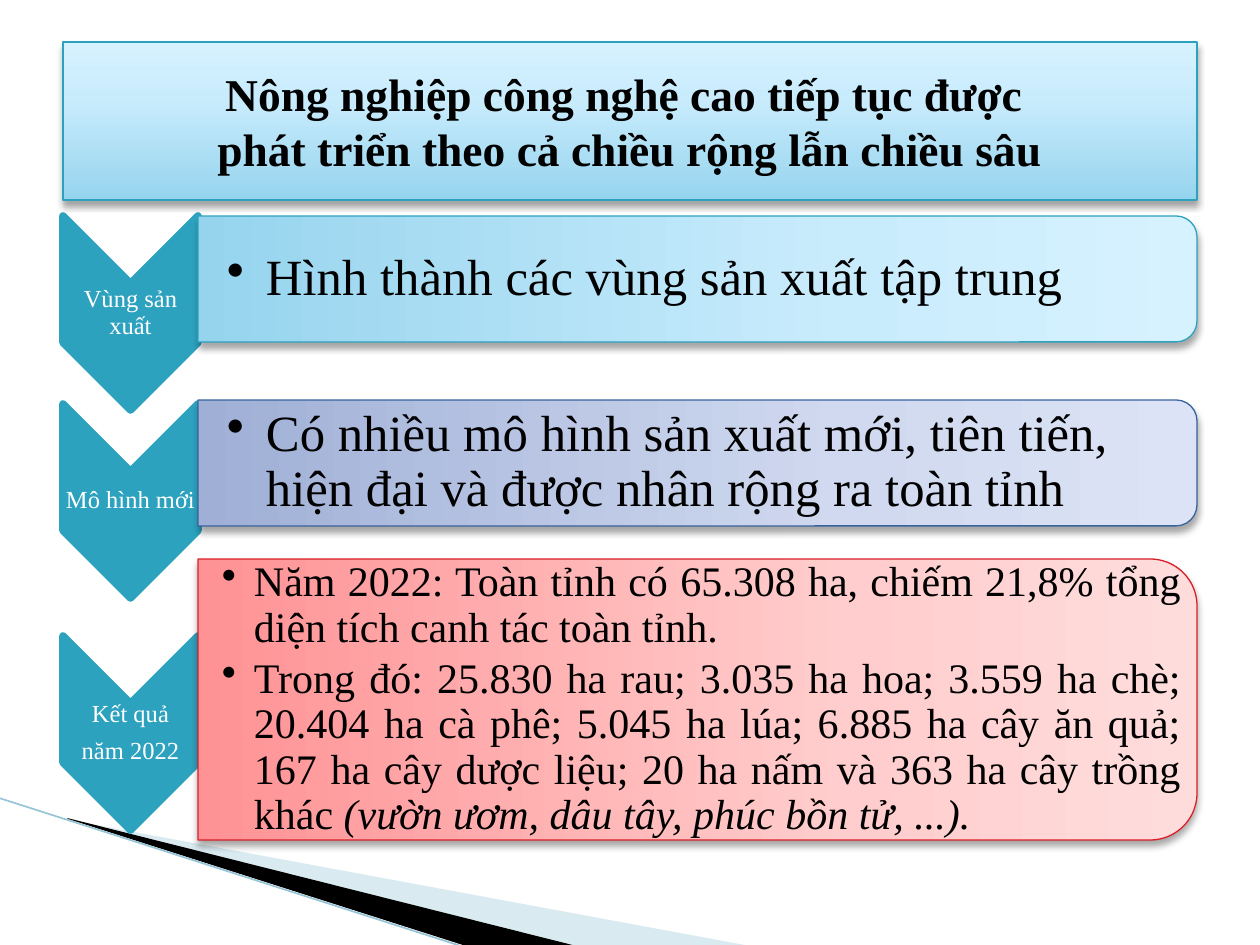
from copy import deepcopy

from lxml import etree
from pptx import Presentation
from pptx import util as u
from pptx.dml.color import RGBColor
from pptx.enum import shapes, text
from pptx.oxml.ns import qn

PX = u.Inches(1) / 126
FONT = "Times New Roman"
BLACK = RGBColor(0x00, 0x00, 0x00)
WHITE = RGBColor(0xFF, 0xFF, 0xFF)
TEAL = RGBColor(0x2D, 0xA2, 0xBF)
NAVY = RGBColor(0x39, 0x63, 0x9D)
RED = RGBColor(0xDA, 0x1F, 0x28)
PALE_BLUE = RGBColor(0xA0, 0xCB, 0xDC)
LINE_BLUE = RGBColor(0x97, 0xC5, 0xD8)
SKY_STOPS = [RGBColor(0x96, 0xD4, 0xEE), RGBColor(0xC9, 0xEC, 0xFC), RGBColor(0xD7, 0xF2, 0xFF)]
NAVY_STOPS = [RGBColor(0x9F, 0xAF, 0xD6), RGBColor(0xD0, 0xD9, 0xEF), RGBColor(0xDC, 0xE3, 0xF6)]
RED_STOPS = [RGBColor(0xFF, 0x92, 0x94), RGBColor(0xFF, 0xCD, 0xCD), RGBColor(0xFF, 0xDC, 0xDC)]


def px(n):
    return u.Emu(round(n * PX))


def sub(parent, tag, **attrs):
    return etree.SubElement(parent, qn(tag), {k: str(v) for k, v in attrs.items()})


class Deck:
    def __init__(self, slide):
        self.s = slide

    def glossy(self, sp, stops, line):
        """Three-stop gradient, thin outline and a soft shadow below."""
        sp.shadow.inherit = False
        sp.fill.gradient()
        sp.fill.gradient_angle = 90
        gs_list = sp._element.spPr.find(".//" + qn("a:gsLst"))
        gs_list.append(deepcopy(gs_list[-1]))
        for stop, color, position in zip(sp.fill.gradient_stops, stops, (0, 0.65, 1)):
            stop.color.rgb = color
            stop.position = position
        sp.line.color.rgb = line
        sp.line.width = u.Pt(0.75)
        shadow = sub(sp._element.spPr.find(qn("a:effectLst")), "a:outerShdw", blurRad=u.Pt(4),
                     dist=u.Pt(3), dir=5400000, rotWithShape=0)
        sub(sub(shadow, "a:srgbClr", val=BLACK), "a:alpha", val=35000)

    def turned(self, kind, x, y, w, h):
        """Preset shape turned 90 degrees that covers the given box on the slide."""
        sp = self.s.shapes.add_shape(kind, px(x + (w - h) / 2), px(y + (h - w) / 2), px(h), px(w))
        sp.rotation = 90
        sp.shadow.inherit = False
        return sp

    def chevron(self, x, y, w, h):
        sp = self.turned(shapes.MSO_SHAPE.CHEVRON, x, y, w, h)
        sp.fill.solid()
        sp.fill.fore_color.rgb = TEAL
        sp.line.color.rgb = TEAL
        sp.line.width = u.Pt(4.33)
        sub(sp.line._get_or_add_ln(), "a:round")

    def bar(self, x, y, w, h, stops, line):
        self.glossy(self.turned(shapes.MSO_SHAPE.ROUND_2_SAME_RECTANGLE, x, y, w, h), stops, line)

    def textbox(self, x, y, w, h, paragraphs, size, color, align, after, left=1, inset=1, indent=0):
        """Each paragraph is a list of runs; every second run is italic."""
        tf = self.s.shapes.add_textbox(px(x), px(y), px(w), px(h)).text_frame
        tf.word_wrap = True
        tf.vertical_anchor = text.MSO_ANCHOR.MIDDLE
        tf.margin_left = px(left)
        tf.margin_top = tf.margin_right = tf.margin_bottom = px(inset)
        for i, runs in enumerate(paragraphs):
            p = tf.paragraphs[0] if i == 0 else tf.add_paragraph()
            p.alignment = align
            p.line_spacing = 0.9
            p.space_after = u.Pt(after)
            if indent:
                p.level = 1
                pPr = p._p.get_or_add_pPr()
                pPr.set("marL", str(px(indent)))
                pPr.set("indent", str(-px(indent)))
                sub(pPr, "a:buChar", char="•")
            p.font.name, p.font.size, p.font.color.rgb = FONT, u.Pt(size), color
            for j, words in enumerate(runs):
                r = p.add_run()
                r.text = words
                if j % 2:
                    r.font.italic = True

    def polygon(self, points, color, alpha=None):
        fb = self.s.shapes.build_freeform(*points[0], scale=PX)
        fb.add_line_segments(points[1:], close=True)
        sp = fb.convert_to_shape()
        sp.shadow.inherit = False
        sp.fill.solid()
        sp.fill.fore_color.rgb = color
        sp.line.fill.background()
        if alpha:
            sub(sp._element.spPr.find(".//" + qn("a:srgbClr")), "a:alpha", val=alpha * 1000)

    def line(self, x1, y1, x2, y2, color, width):
        cn = self.s.shapes.add_connector(shapes.MSO_CONNECTOR.STRAIGHT, px(x1), px(y1), px(x2), px(y2))
        cn.line.color.rgb = color
        cn.line.width = u.Pt(width)
        sub(cn._element.spPr, "a:effectLst")

    def title(self, x, y, w, h, words):
        sp = self.s.shapes.title
        sp.left, sp.top, sp.width, sp.height = px(x), px(y), px(w), px(h)
        self.glossy(sp, SKY_STOPS, TEAL)
        tf = sp.text_frame
        tf.text = words
        tf.auto_size = text.MSO_AUTO_SIZE.NONE
        tf.vertical_anchor = text.MSO_ANCHOR.MIDDLE
        p = tf.paragraphs[0]
        p.alignment = text.PP_ALIGN.CENTER
        p.font.name, p.font.size, p.font.bold, p.font.color.rgb = FONT, u.Pt(26), True, BLACK


def main():
    prs = Presentation()
    prs.slide_width, prs.slide_height = u.Inches(10), u.Inches(7.5)
    deck = Deck(prs.slides.add_slide(prs.slide_layouts[5]))

    deck.polygon([(69, 820), (750, 946), (575, 946), (69, 819)], PALE_BLUE, alpha=40)
    deck.polygon([(67, 818), (576, 946), (469, 947), (68, 819)], BLACK)
    deck.line(-1, 798, 467, 948, LINE_BLUE, 0.95)

    left, center, justify = text.PP_ALIGN.LEFT, text.PP_ALIGN.CENTER, text.PP_ALIGN.JUSTIFY
    large = dict(size=29, align=left, after=4.5, left=29, indent=39)
    small = dict(size=24, align=justify, after=3.5, left=24, indent=32)
    # chevron top, label, bar top, bar height, text inset, gradient, outline, text style, text
    rows = [
        (216, [["Vùng sản xuất"]], 216, 126, 6, SKY_STOPS, TEAL, large,
         [["Hình thành các vùng sản xuất tập trung"]]),
        (404, [["Mô hình mới"]], 400, 126, 6, NAVY_STOPS, NAVY, large,
         [["Có nhiều mô hình sản xuất mới, tiên tiến, hiện đại và được nhân rộng ra toàn tỉnh"]]),
        (636, [["Kết quả"], ["năm 2022"]], 559, 281, 14, RED_STOPS, RED, small,
         [["Năm 2022: Toàn tỉnh có 65.308 ha, chiếm 21,8% tổng diện tích canh tác toàn tỉnh."],
          ["Trong đó: 25.830 ha rau; 3.035 ha hoa; 3.559 ha chè; 20.404 ha cà phê; 5.045 ha lúa; "
           "6.885 ha cây ăn quả; 167 ha cây dược liệu; 20 ha nấm và 363 ha cây trồng khác ",
           "(vườn ươm, dâu tây, phúc bồn tử, ...)."]]),
    ]
    for top, label, bar_top, bar_h, inset, stops, line, style, body in rows:
        deck.chevron(63, top, 135, 194)
        deck.textbox(63, top + 68, 135, 58, label, size=14, color=WHITE, align=center, after=6)
        deck.bar(198, bar_top, 999, bar_h, stops, line)
        deck.textbox(198, bar_top + inset, 999 - inset, bar_h - 2 * inset, body, color=BLACK,
                     inset=2, **style)

    deck.title(63, 42, 1134, 158,
               "Nông nghiệp công nghệ cao tiếp tục được \vphát triển theo cả chiều rộng lẫn chiều sâu")
    prs.save("out.pptx")


if __name__ == "__main__":
    main()
